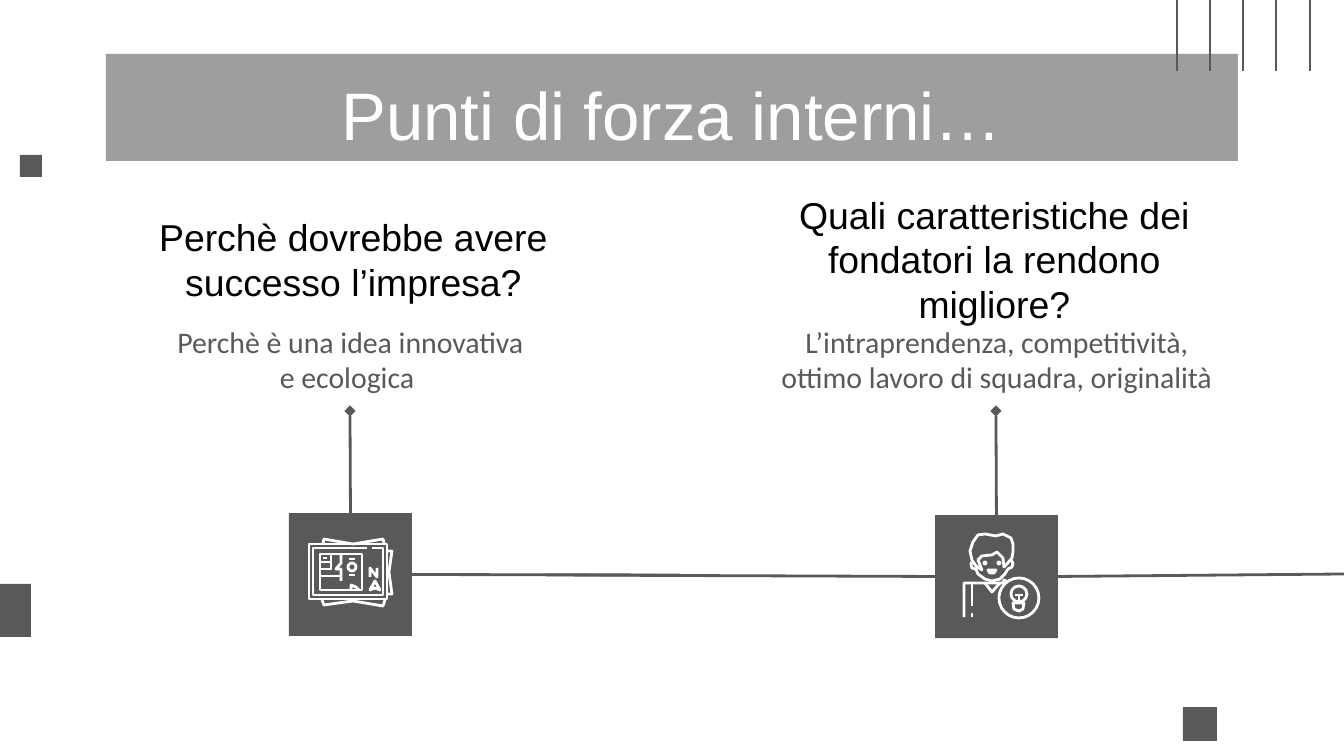
from lxml import etree
from pptx import Presentation
from pptx import util as u
from pptx.dml import color
from pptx.enum import shapes, text
from pptx.oxml import ns

PX = 6804
HUES = {"dark": "58595B", "white": "FFFFFF", "black": "000000"}
KIND = shapes.MSO_SHAPE

PLAN = [
    [(34, 30), (35, 26), (64, 31), (94, 26), (95, 30)],
    [(33, 87), (35, 92), (64, 88), (94, 93), (96, 87)],
    [(99, 38), (103, 38), (100, 59), (103, 81), (99, 81)],
    [(20, 31), (98, 31), (98, 86), (20, 86), (20, 31)],
    [(83, 35), (94, 35), (94, 82), (24, 82), (24, 35), (78, 35)],
    [(31, 41), (73, 41), (73, 77), (31, 77), (31, 41)],
    [(42, 41), (42, 56), (31, 56)],
    [(31, 49), (42, 49)],
    [(34, 45), (38, 45)],
    [(52, 41), (52, 50), (47, 56), (52, 56), (52, 68)],
    [(31, 63), (52, 63)],
    [(62, 77), (62, 72), (67, 74), (70, 77)],
    [(60, 46), (66, 46)],
    [(60, 62), (66, 62)],
    [(81, 64), (81, 55), (88, 64), (88, 55)],
    [(81, 77), (86, 68), (91, 77), (86, 75), (81, 77)],
]
MAN = [
    [(35, 36), (38, 27), (43, 20), (50, 19), (61, 21), (68, 19), (76, 23),
     (78, 29), (78, 37), (77, 43), (72, 49), (69, 52), (68, 43), (62, 37),
     (57, 40), (47, 41), (43, 45), (47, 55), (41, 51), (37, 45), (35, 36)],
    [(37, 47), (36, 49), (37, 53), (41, 54), (43, 59), (50, 64), (57, 66),
     (65, 64), (70, 59), (73, 54), (77, 52), (78, 48), (76, 45)],
    [(53, 55), (61, 55), (59, 58), (55, 58), (53, 55)],
    [(29, 102), (29, 68), (68, 68), (69, 65), (73, 67)],
    [(37, 69), (37, 91)],
    [(37, 98), (37, 102)],
    [(50, 68), (57, 77), (65, 68)],
    [(78, 88), (89, 88), (88, 94), (84, 96), (79, 94), (78, 88)],
    [(80, 80), (88, 80)],
    [(84, 80), (84, 87)],
]
PLAN_RINGS = [(63, 54, 4)]
MAN_RINGS = [(50, 48, 1), (64, 48, 1), (84, 83, 20), (84, 79, 8)]


def px(n):
    return u.Emu(n * PX)


def hue(name):
    return color.RGBColor.from_string(HUES[name])


def ink(line, name):
    line.color.rgb = hue(name)
    line.width = u.Pt(1.5)


def block(slide, x, y, w, h, alpha=None):
    rect = slide.shapes.add_shape(KIND.RECTANGLE, px(x), px(y), px(w), px(h))
    rect.shadow.inherit = False
    rect.fill.solid()
    rect.fill.fore_color.rgb = hue("dark")
    rect.line.fill.background()
    if alpha:
        tint = rect._element.spPr.find(".//" + ns.qn("a:srgbClr"))
        etree.SubElement(tint, ns.qn("a:alpha"), val=str(alpha * 1000))
    return rect


def words(slide, x, y, w, h, copy, size, font, name):
    box = slide.shapes.add_textbox(px(x), px(y), px(w), px(h))
    frame = box.text_frame
    frame.word_wrap = True
    frame.vertical_anchor = text.MSO_ANCHOR.MIDDLE
    frame.margin_left = frame.margin_right = 0
    frame.margin_top = frame.margin_bottom = 0
    para = frame.paragraphs[0]
    para.alignment = text.PP_ALIGN.CENTER
    run = para.add_run()
    run.text = copy
    run.font.size = u.Pt(size)
    run.font.name = font
    run.font.color.rgb = hue(name)


def link(slide, x1, y1, x2, y2, tip=False):
    line = slide.shapes.add_connector(
        shapes.MSO_CONNECTOR.STRAIGHT, px(x1), px(y1), px(x2), px(y2))
    ink(line.line, "dark")
    if tip:
        etree.SubElement(line.line._get_or_add_ln(), ns.qn("a:tailEnd"), type="diamond")
    etree.SubElement(line._element.spPr, ns.qn("a:effectLst"))
    return line


def icon(slide, x, y, paths, rings):
    parts = []
    for path in paths:
        (left, top), *rest = path
        pen = slide.shapes.build_freeform(x + left, y + top, scale=PX)
        pen.add_line_segments([(x + a, y + b) for a, b in rest], close=path[0] == path[-1])
        parts.append(pen.convert_to_shape())
    for a, b, r in rings:
        parts.append(slide.shapes.add_shape(
            KIND.OVAL, px(x + a - r), px(y + b - r), px(2 * r), px(2 * r)))
    for part in parts:
        part.shadow.inherit = False
        part.fill.background()
        ink(part.line, "white")
    slide.shapes.add_group_shape(parts)


def decor(slide):
    block(slide, 106, 54, 1132, 107, alpha=58)
    block(slide, 20, 155, 22, 22)
    for i in range(5):
        x = 1177 + 133 * i // 4
        link(slide, x, -102, x, 71)
    block(slide, 1183, 707, 34, 34)
    block(slide, -22, 584, 53, 53)


def step(slide, x, y, ask, reply, paths, rings):
    side = 123
    tile = block(slide, x, y, side, side)
    words(slide, *ask, 20, "Arial", "black")
    words(slide, *reply, 16, "Calibri", "dark")
    stem = link(slide, x + side // 2, y, x + side // 2, 411, tip=True)
    stem.begin_connect(tile, 0)
    icon(slide, x, y, paths, rings)
    return tile


def main():
    deck = Presentation()
    deck.slide_width, deck.slide_height = px(1344), px(756)
    slide = deck.slides.add_slide(deck.slide_layouts[6])
    decor(slide)
    words(slide, 106, 71, 1132, 85, "Punti di forza interni…", 36, "Arial", "white")
    idea = step(
        slide, 289, 513,
        (151, 235, 405, 48, "Perchè dovrebbe avere successo l’impresa?"),
        (175, 306, 351, 106, "Perchè è una idea innovativa e ecologica "),
        PLAN, PLAN_RINGS)
    team = step(
        slide, 935, 515,
        (750, 235, 489, 48, "Quali caratteristiche dei fondatori la rendono migliore?"),
        (767, 306, 460, 106,
         "L’intraprendenza, competitività, ottimo lavoro di squadra, originalità"),
        MAN, MAN_RINGS)
    link(slide, 412, 575, 680, 575).begin_connect(idea, 3)
    link(slide, 546, 575, 935, 576).end_connect(team, 1)
    link(slide, 1058, 576, 1344, 574).begin_connect(team, 3)
    deck.save("out.pptx")


if __name__ == "__main__":
    main()
